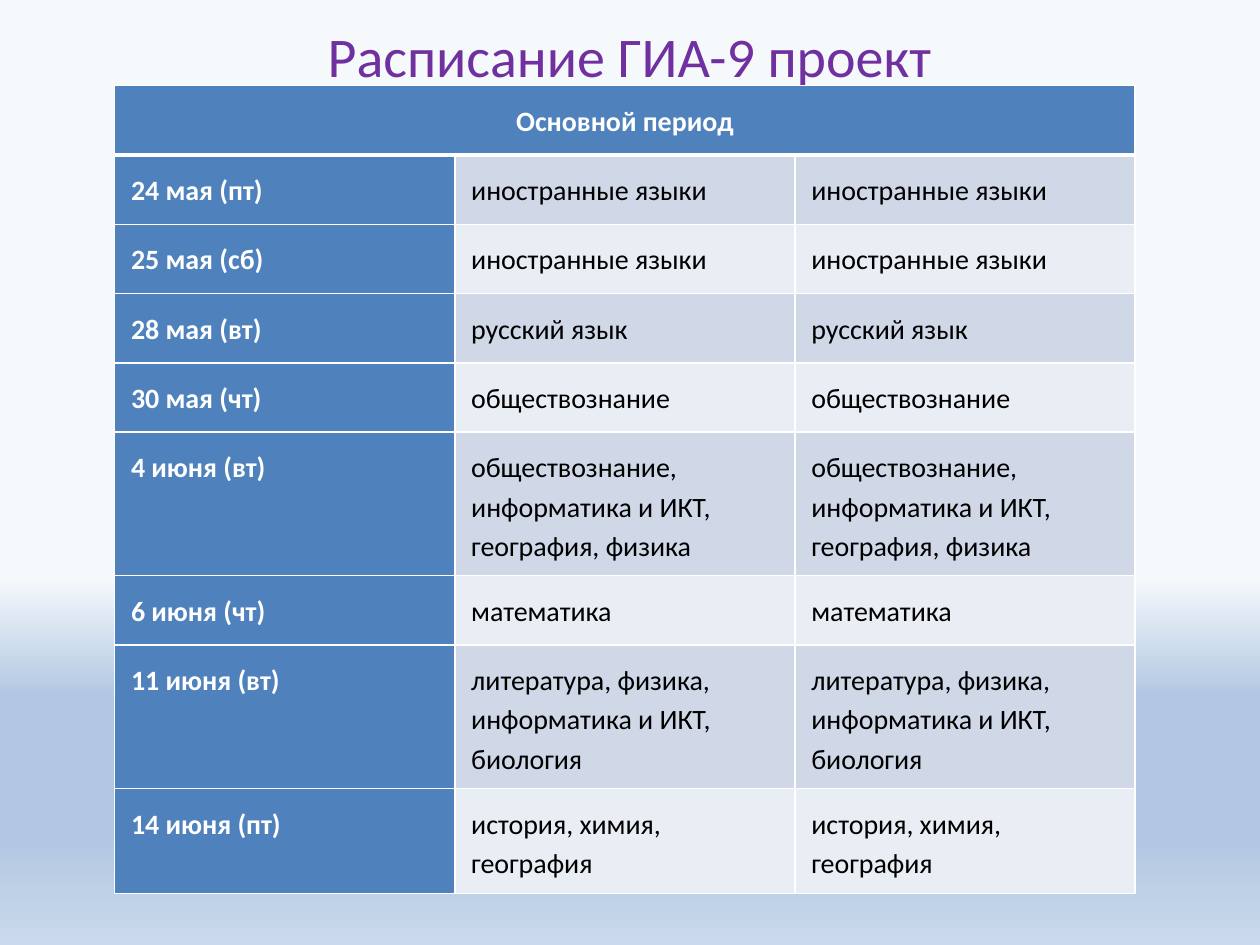
from lxml.etree import SubElement
from pptx import Presentation
from pptx.dml.color import RGBColor
from pptx.enum.text import MSO_ANCHOR as Anchor, PP_ALIGN as Align
from pptx.oxml.ns import qn
from pptx.util import Inches, Pt

COLORS = {
    "title": "7030A0", "head": "4F81BD", "odd": "D0D8E8", "even": "E9EDF4",
    "white": "FFFFFF", "black": "000000",
    "sky": "F6F9FC", "haze": "B0C6E1", "ground": "CAD9EB",
}
BACKDROP = [(61, "sky"), (74, "haze"), (88, "haze"), (100, "ground")]
HEADING = "Основной период"
EXAMS = [
    ("24 мая (пт)", "иностранные языки"),
    ("25 мая (сб)", "иностранные языки"),
    ("28 мая (вт)", "русский язык"),
    ("30 мая (чт)", "обществознание"),
    ("4 июня (вт)", "обществознание, информатика и ИКТ, география, физика"),
    ("6 июня (чт)", "математика"),
    ("11 июня (вт)", "литература, физика, информатика и ИКТ, биология"),
    ("14 июня (пт)", "история, химия, география"),
]
COLUMN, ROW, TALL_ROW = 2.7, 0.55, 1.11
LONG_TEXT = 40


class SlideBuilder:
    def __init__(self, page, font="Calibri"):
        self.page = page
        self.font = font

    def color(self, name):
        return RGBColor.from_string(COLORS[name])

    def backdrop(self, stops):
        fill = self.page.background.fill
        fill.gradient()
        fill.gradient_angle = 270
        stop_list = next(self.page.element.iter(qn("a:gsLst")))
        for old in list(stop_list):
            stop_list.remove(old)
        for percent, name in stops:
            stop = SubElement(stop_list, qn("a:gs"), pos=str(percent * 1000))
            SubElement(stop, qn("a:srgbClr"), val=COLORS[name])

    def add_text(self, frame, text, size, color, bold=False, align=Align.LEFT, spacing=1.0):
        para = frame.paragraphs[0]
        para.alignment, para.line_spacing = align, spacing
        span = para.add_run()
        span.text = text
        span.font.name, span.font.size, span.font.bold = self.font, Pt(size), bold
        span.font.color.rgb = self.color(color)

    def title(self, text, left, top, width, height):
        box = self.page.shapes.add_textbox(*map(Inches, (left, top, width, height)))
        frame = box.text_frame
        frame.word_wrap = True
        frame.vertical_anchor = Anchor.MIDDLE
        self.add_text(frame, text, 32, "title", align=Align.CENTER)

    def cell(self, cell, text, fill, color, bold=False, align=Align.LEFT, bottom=1):
        cell.margin_left = cell.margin_right = Inches(0.13)
        cell.margin_top = cell.margin_bottom = Inches(0.11)
        if text:
            self.add_text(cell.text_frame, text, 16, color, bold, align, 1.15)
        self.borders(cell, bottom)
        cell.fill.solid()
        cell.fill.fore_color.rgb = self.color(fill)

    def borders(self, cell, bottom):
        properties = cell._tc.get_or_add_tcPr()
        for side, width in (("L", 1), ("R", 1), ("T", 1), ("B", bottom)):
            line = SubElement(properties, qn(f"a:ln{side}"), w=str(Pt(width)))
            solid = SubElement(line, qn("a:solidFill"))
            SubElement(solid, qn("a:srgbClr"), val=COLORS["white"])

    def schedule(self, heading, exams, left, top):
        heights = [ROW] + [TALL_ROW if len(subjects) > LONG_TEXT else ROW
                           for _, subjects in exams]
        table = self.page.shapes.add_table(
            len(heights), 3, Inches(left), Inches(top),
            Inches(3 * COLUMN), Inches(sum(heights))).table
        for column in table.columns:
            column.width = Inches(COLUMN)
        for row, height in zip(table.rows, heights):
            row.height = Inches(height)

        table.cell(0, 0).merge(table.cell(0, 2))
        for index, text in enumerate((heading, "", "")):
            self.cell(table.cell(0, index), text, "head", "white", True, Align.CENTER, 3)
        for number, (date, subjects) in enumerate(exams, 1):
            self.cell(table.cell(number, 0), date, "head", "white", True)
            for index in (1, 2):
                self.cell(table.cell(number, index), subjects,
                          "odd" if number % 2 else "even", "black")


def main():
    deck = Presentation()
    deck.slide_width, deck.slide_height = Inches(10), Inches(7.5)
    builder = SlideBuilder(deck.slides.add_slide(deck.slide_layouts[6]))
    builder.backdrop(BACKDROP)
    builder.title("Расписание ГИА-9 проект", 0.5, -0.11, 9, 1.1)
    builder.schedule(HEADING, EXAMS, 0.91, 0.68)
    deck.save("out.pptx")


if __name__ == "__main__":
    main()
